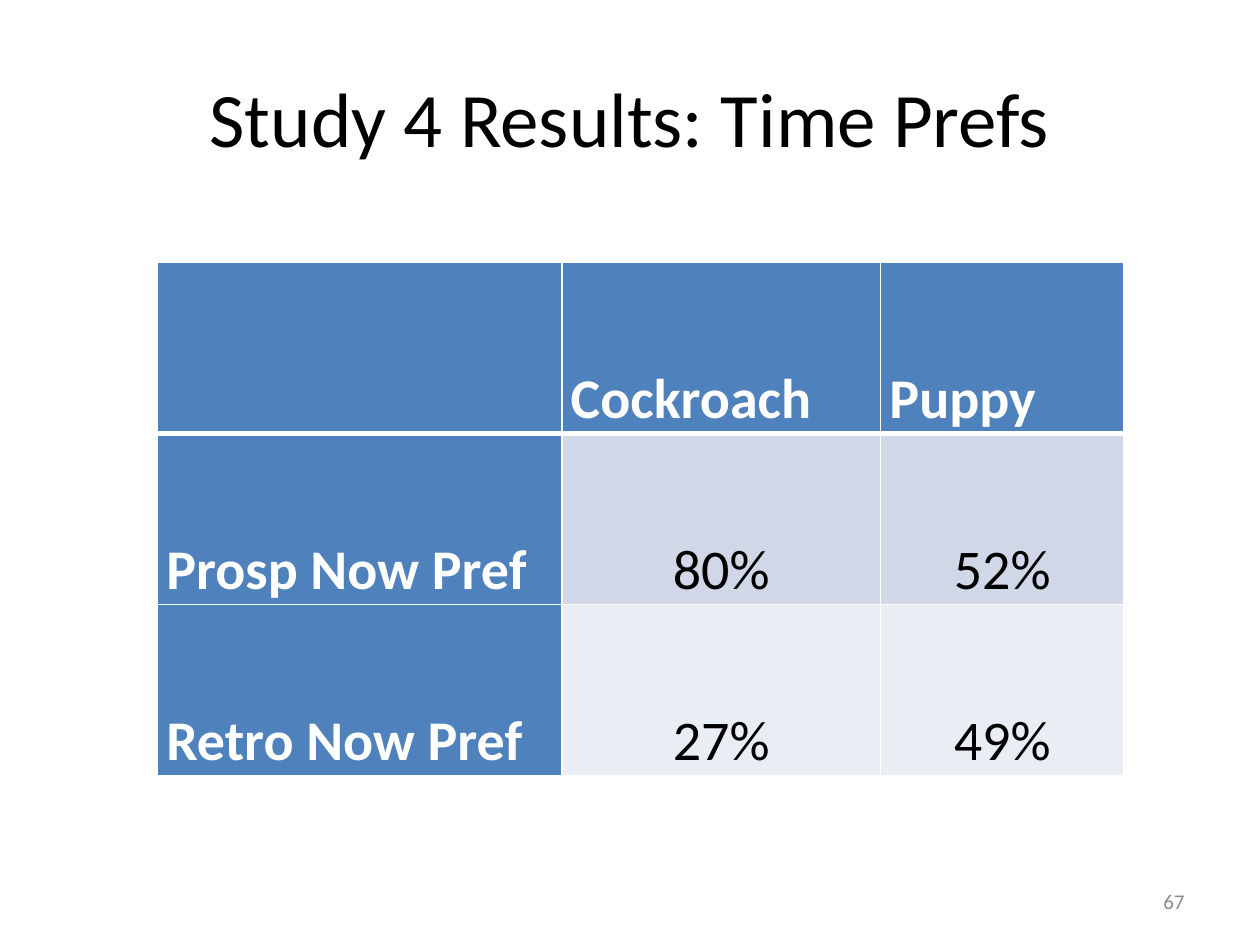
from dataclasses import dataclass

from lxml.etree import SubElement
from pptx import Presentation
from pptx.dml.color import RGBColor
from pptx.enum.text import MSO_ANCHOR, PP_ALIGN
from pptx.oxml.ns import qn
from pptx.util import Inches, Pt

# Content
TITLE = "Study 4 Results: Time Prefs"
PAGE_NUMBER = "67"
ROWS = [
    ("", "Cockroach", "Puppy"),
    ("Prosp Now Pref", "80%", "52%"),
    ("Retro Now Pref", "27%", "49%"),
]
COLUMN_WIDTHS = (3.21, 2.53, 1.93)
ROW_HEIGHT = 1.36


@dataclass(frozen=True)
class Theme:
    font: str = "Calibri"
    title_size: int = 44
    table_size: int = 32
    number_size: int = 12
    text: str = "000000"
    muted: str = "8C8C8C"
    light: str = "FFFFFF"
    header: str = "4F81BD"
    bands: tuple = ("D0D8E8", "E9EDF4")
    rule: int = 1
    header_rule: int = 3


THEME = Theme()


def style(para, size, color, align, bold=False):
    para.alignment = align
    para.font.name = THEME.font
    para.font.size = Pt(size)
    para.font.bold = bold
    para.font.color.rgb = RGBColor.from_string(color)


def add_text(page, text, place, size, color, align):
    box = page.shapes.add_textbox(*(Inches(length) for length in place))
    frame = box.text_frame
    frame.word_wrap = True
    frame.vertical_anchor = MSO_ANCHOR.MIDDLE
    frame.text = text
    style(frame.paragraphs[0], size, color, align)


def set_borders(cell, top, bottom):
    properties = cell._tc.get_or_add_tcPr()
    widths = {"a:lnL": THEME.rule, "a:lnR": THEME.rule, "a:lnT": top, "a:lnB": bottom}
    for tag, width in widths.items():
        line = SubElement(properties, qn(tag), w=str(Pt(width)))
        fill = SubElement(line, qn("a:solidFill"))
        SubElement(fill, qn("a:srgbClr"), val=THEME.light)


def fill_cell(cell, text, row, column):
    is_header = row == 0 or column == 0
    set_borders(
        cell,
        THEME.header_rule if row == 1 else THEME.rule,
        THEME.header_rule if row == 0 else THEME.rule,
    )
    color = THEME.header if is_header else THEME.bands[(row - 1) % 2]
    cell.fill.solid()
    cell.fill.fore_color.rgb = RGBColor.from_string(color)
    cell.margin_left = cell.margin_right = Inches(0.07)
    cell.margin_top = cell.margin_bottom = 0
    cell.vertical_anchor = MSO_ANCHOR.BOTTOM
    cell.text = text
    para = cell.text_frame.paragraphs[0]
    para.line_spacing = 1.07
    style(
        para,
        THEME.table_size,
        THEME.light if is_header else THEME.text,
        PP_ALIGN.LEFT if is_header else PP_ALIGN.CENTER,
        bold=is_header,
    )


def add_results(page):
    table = page.shapes.add_table(
        len(ROWS), len(COLUMN_WIDTHS), Inches(1.25), Inches(2.08),
        Inches(sum(COLUMN_WIDTHS)), Inches(ROW_HEIGHT * len(ROWS)),
    ).table
    table.first_col = True
    for column, width in zip(table.columns, COLUMN_WIDTHS):
        column.width = Inches(width)
    for row, values in enumerate(ROWS):
        table.rows[row].height = Inches(ROW_HEIGHT)
        for column, text in enumerate(values):
            fill_cell(table.cell(row, column), text, row, column)


def main():
    deck = Presentation()
    deck.slide_width, deck.slide_height = Inches(10), Inches(7.5)
    page = deck.slides.add_slide(deck.slide_layouts[6])

    # Title, page number and results table
    add_text(page, TITLE, (0.5, 0.3, 9, 1.25),
             THEME.title_size, THEME.text, PP_ALIGN.CENTER)
    add_text(page, PAGE_NUMBER, (7.17, 6.95, 2.33, 0.4),
             THEME.number_size, THEME.muted, PP_ALIGN.RIGHT)
    add_results(page)

    deck.save("out.pptx")


if __name__ == "__main__":
    main()
